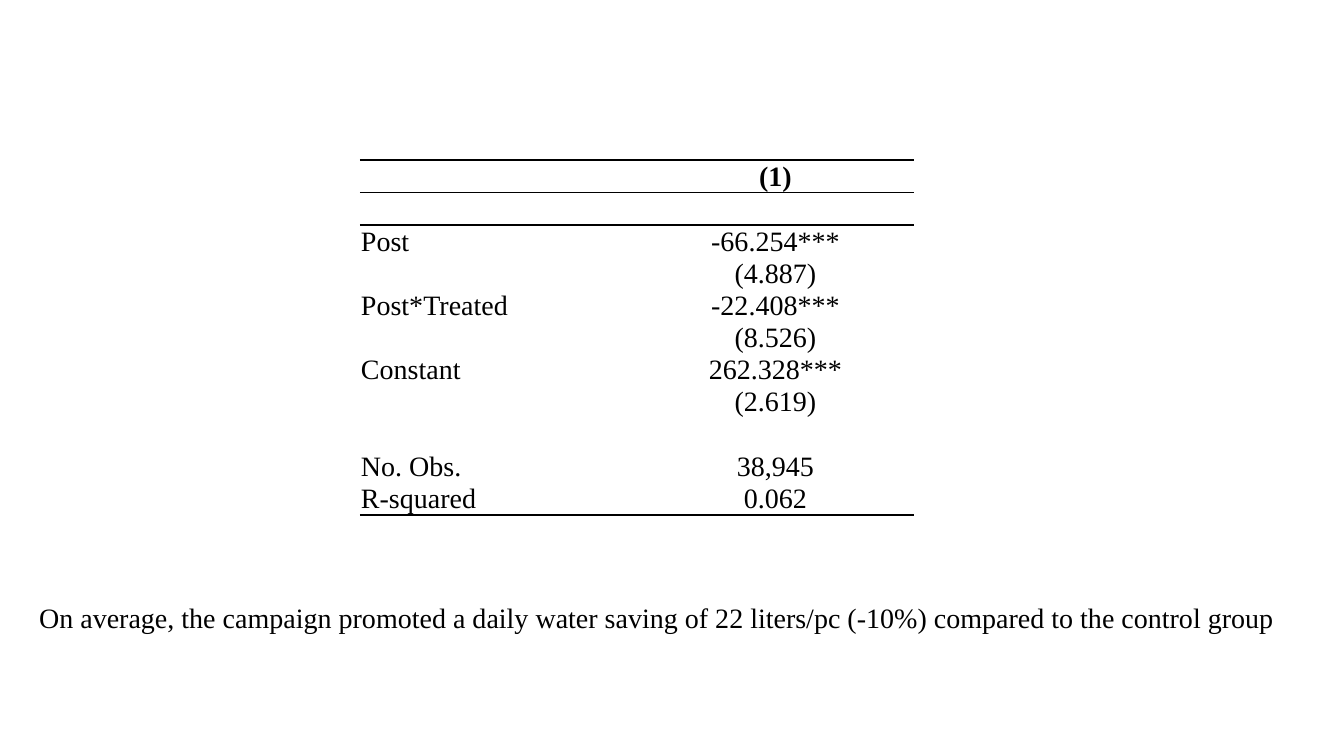
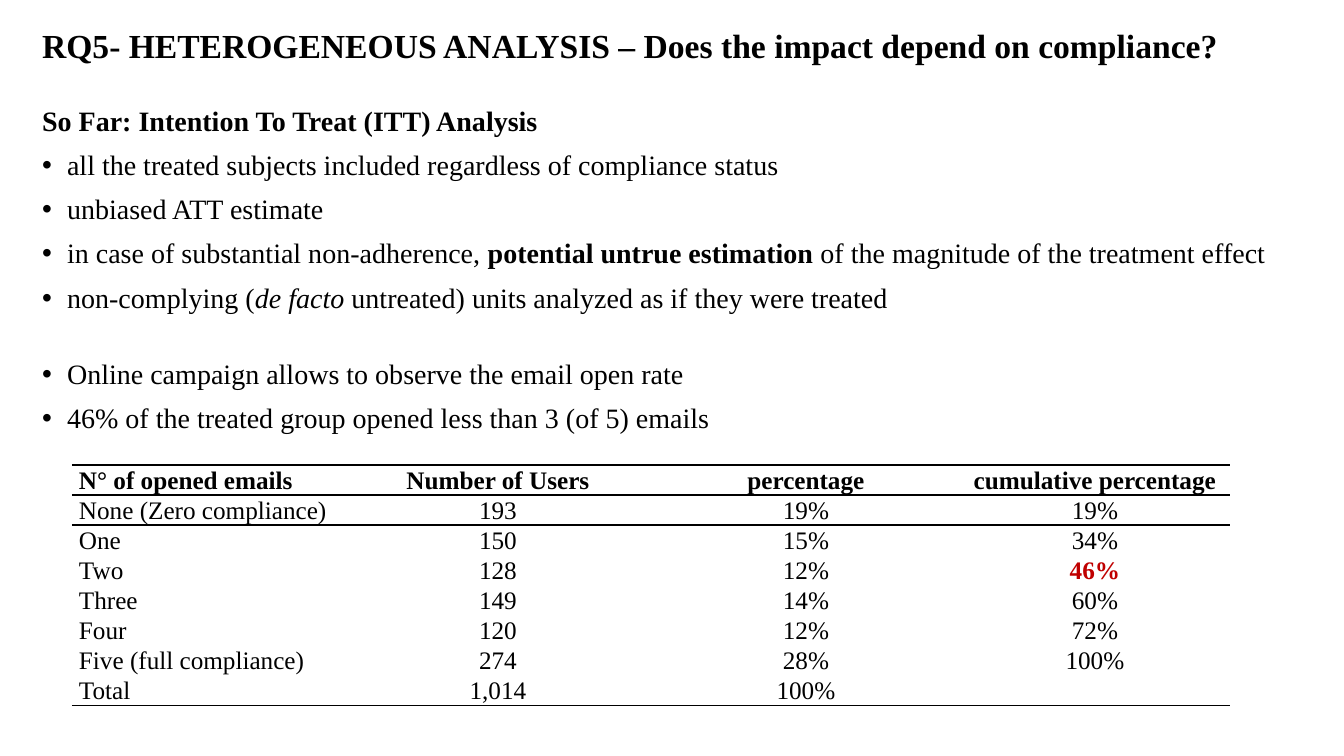
from dataclasses import dataclass

from lxml import etree
from pptx import Presentation
from pptx import util as u
from pptx.dml.color import RGBColor
from pptx.enum import text
from pptx.oxml import ns

# Shared style
EMU_PER_PX = 914400 / 100.8
FONT = "Times New Roman"
BLACK = RGBColor(0x00, 0x00, 0x00)
WHITE = RGBColor(0xFF, 0xFF, 0xFF)
RED = RGBColor(0xC0, 0x00, 0x00)
BODY_SIZE = 20
TITLE_SIZE = 24
BULLET_INDENT = 25
NO_STYLE = "{2D5ABB26-0587-4C30-8999-92F81FD0307C}"


@dataclass(frozen=True)
class Box:
    left: int
    top: int
    width: int
    height: int


@dataclass(frozen=True)
class Run:
    words: str
    bold: bool = False
    italic: bool = False


@dataclass(frozen=True)
class Line:
    runs: tuple[Run, ...]
    bullet: bool = False
    before: int = 10
    spacing: float = 0.9


@dataclass(frozen=True)
class TableDesign:
    left: int
    top: int
    columns: tuple[int, ...]
    row_height: int
    empty_row_height: int
    size: int
    side_inset: int
    top_inset: int
    spacing: float
    highlight: tuple[int, int] | None = None


def px(length: int) -> u.Emu:
    return u.Emu(round(length * EMU_PER_PX))


def place(shape, box: Box) -> None:
    shape.left, shape.top = px(box.left), px(box.top)
    shape.width, shape.height = px(box.width), px(box.height)


def add_text(paragraph, words: str, *, size: int = BODY_SIZE, bold: bool = False,
             italic: bool = False, color: RGBColor = BLACK) -> None:
    run = paragraph.add_run()
    run.text = words
    font = run.font
    font.name, font.size = FONT, u.Pt(size)
    font.bold, font.italic = bold, italic
    font.color.rgb = color


def set_bullet(paragraph, bullet: bool) -> None:
    properties = paragraph._p.get_or_add_pPr()
    indent = px(BULLET_INDENT) if bullet else 0
    properties.set("marL", str(indent))
    properties.set("indent", str(-indent))
    if bullet:
        font = etree.SubElement(properties, ns.qn("a:buFont"))
        font.set("typeface", "Arial")
        etree.SubElement(properties, ns.qn("a:buChar")).set("char", "•")
    else:
        etree.SubElement(properties, ns.qn("a:buNone"))


def prepare_frame(shape, box: Box):
    place(shape, box)
    frame = shape.text_frame
    frame.word_wrap = True
    frame.auto_size = text.MSO_AUTO_SIZE.NONE
    frame.vertical_anchor = text.MSO_ANCHOR.TOP
    return frame


def fill_title(slide, words: str, box: Box) -> None:
    paragraph = prepare_frame(slide.shapes.title, box).paragraphs[0]
    paragraph.alignment = text.PP_ALIGN.LEFT
    paragraph.line_spacing = 1.5
    add_text(paragraph, words, size=TITLE_SIZE, bold=True)


def fill_body(slide, lines: list[Line], box: Box) -> None:
    frame = prepare_frame(slide.placeholders[1], box)
    for index, line in enumerate(lines):
        paragraph = frame.add_paragraph() if index else frame.paragraphs[0]
        paragraph.line_spacing = line.spacing
        paragraph.space_before = u.Pt(line.before)
        set_bullet(paragraph, line.bullet)
        for run in line.runs:
            add_text(paragraph, run.words, bold=run.bold, italic=run.italic)


def add_rules(cell, top: bool, bottom: bool) -> None:
    """Draw black top and bottom borders; they precede the fill in the XML."""
    edges = [name for name, wanted in (("a:lnT", top), ("a:lnB", bottom)) if wanted]
    for position, name in enumerate(edges):
        border = etree.Element(ns.qn(name), w=str(u.Pt(1)))
        fill = etree.SubElement(border, ns.qn("a:solidFill"))
        etree.SubElement(fill, ns.qn("a:srgbClr"), val=str(BLACK))
        cell._tc.get_or_add_tcPr().insert(position, border)


def add_data_table(slide, rows: list[tuple[str, ...]], design: TableDesign) -> None:
    heights = [design.row_height if any(row) else design.empty_row_height for row in rows]
    table = slide.shapes.add_table(
        len(rows), len(design.columns), px(design.left), px(design.top),
        px(sum(design.columns)), px(sum(heights))).table
    table.first_row = table.horz_banding = False
    table._tbl.tblPr.find(ns.qn("a:tableStyleId")).text = NO_STYLE
    for column, width in zip(table.columns, design.columns):
        column.width = px(width)
    for row_index, (values, height) in enumerate(zip(rows, heights)):
        table.rows[row_index].height = px(height)
        for column_index, words in enumerate(values):
            cell = table.cell(row_index, column_index)
            cell.fill.solid()
            cell.fill.fore_color.rgb = WHITE
            cell.margin_left = cell.margin_right = px(design.side_inset)
            cell.margin_top, cell.margin_bottom = px(design.top_inset), 0
            cell.vertical_anchor = text.MSO_ANCHOR.MIDDLE
            add_rules(cell, top=row_index < 2, bottom=row_index in (0, len(rows) - 1))
            if not words:
                continue
            paragraph = cell.text_frame.paragraphs[0]
            paragraph.line_spacing = design.spacing
            paragraph.alignment = text.PP_ALIGN.CENTER if column_index else text.PP_ALIGN.LEFT
            marked = (row_index, column_index) == design.highlight
            add_text(paragraph, words, size=design.size, bold=marked or row_index == 0,
                     color=RED if marked else BLACK)


# Slide contents
REGRESSION = [
    ("", "(1)"),
    ("", ""),
    ("Post", "-66.254***"),
    ("", "(4.887)"),
    ("Post*Treated", "-22.408***"),
    ("", "(8.526)"),
    ("Constant", "262.328***"),
    ("", "(2.619)"),
    ("", ""),
    ("No. Obs.", "38,945"),
    ("R-squared", "0.062"),
]
REGRESSION_DESIGN = TableDesign(360, 160, (277, 277), 32, 33, 20, 1, 1, 1.0)

CONCLUSION = [Line((Run("On average, the campaign promoted a daily water saving of 22 liters/pc "
                        "(-10%) compared to the control group"),), spacing=1.2)]

ITT_POINTS = [
    Line((Run("So Far: Intention To Treat (ITT) Analysis", bold=True),)),
    Line((Run("all the treated subjects included regardless of compliance status"),), bullet=True),
    Line((Run("unbiased ATT estimate"),), bullet=True),
    Line((Run("in case of substantial non-adherence, "),
          Run("potential untrue estimation ", bold=True),
          Run("of the magnitude of the treatment effect")), bullet=True),
    Line((Run("non-complying ("), Run("de facto", italic=True),
          Run(" untreated) units analyzed as if they were treated")), bullet=True),
    Line((Run("Online campaign allows to observe the email open rate"),), bullet=True, before=33),
    Line((Run("46% of the treated group opened less than 3 (of 5) emails"),), bullet=True),
]

OPENED_EMAILS = [
    ("N° of opened emails", "Number of Users", "percentage", "cumulative percentage"),
    ("None (Zero compliance)", "193", "19%", "19%"),
    ("One", "150", "15%", "34%"),
    ("Two", "128", "12%", "46%"),
    ("Three", "149", "14%", "60%"),
    ("Four", "120", "12%", "72%"),
    ("Five (full compliance)", "274", "28%", "100%"),
    ("Total", "1,014", "100%", ""),
]
OPENED_EMAILS_DESIGN = TableDesign(72, 465, (272, 308, 308, 270), 30, 30, 18, 7, 0, 1.07,
                                   highlight=(3, 3))


def build_results(presentation, layout) -> None:
    slide = presentation.slides.add_slide(layout)
    title = slide.shapes.title.element
    title.getparent().remove(title)
    fill_body(slide, CONCLUSION, Box(29, 589, 1315, 120))
    add_data_table(slide, REGRESSION, REGRESSION_DESIGN)


def build_compliance(presentation, layout) -> None:
    slide = presentation.slides.add_slide(layout)
    fill_title(slide, "RQ5- HETEROGENEOUS ANALYSIS – Does the impact depend on compliance?",
               Box(32, 0, 1266, 66))
    fill_body(slide, ITT_POINTS, Box(32, 102, 1312, 654))
    add_data_table(slide, OPENED_EMAILS, OPENED_EMAILS_DESIGN)


def main() -> None:
    presentation = Presentation()
    presentation.slide_width, presentation.slide_height = px(1344), px(756)
    layout = presentation.slide_layouts[1]
    build_results(presentation, layout)
    build_compliance(presentation, layout)
    presentation.save("out.pptx")


if __name__ == "__main__":
    main()
